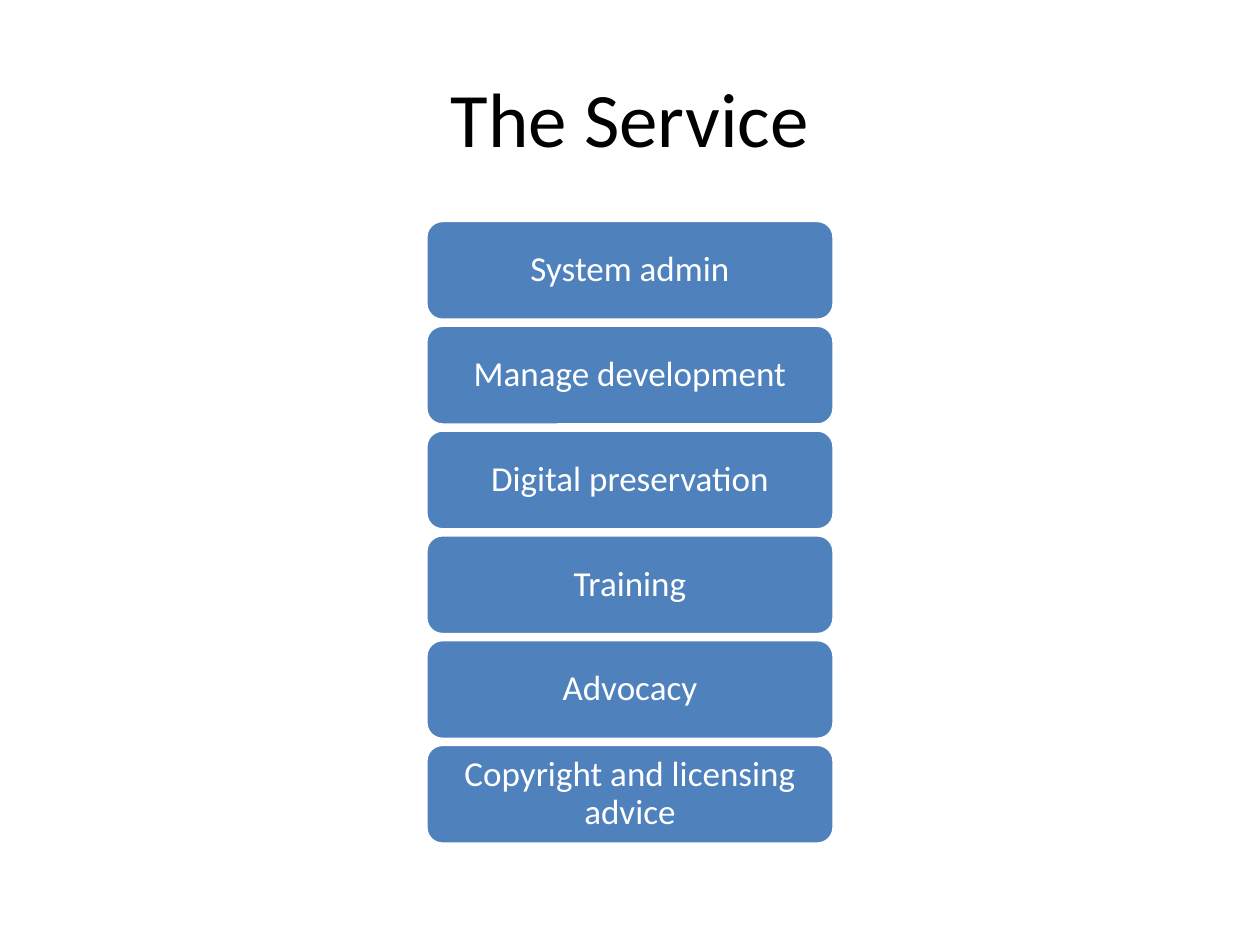
from pptx import Presentation
from pptx.dml.color import RGBColor
from pptx.enum.shapes import MSO_SHAPE
from pptx.enum.text import MSO_ANCHOR, PP_ALIGN
from pptx.util import Inches, Pt

SERVICES = ["System admin", "Manage development", "Digital preservation",
            "Training", "Advocacy", "Copyright and licensing advice"]


def rgb(value):
    """Turn a hex string into a colour."""
    return RGBColor.from_string(value)


def set_text(sp, text, size, color, inset_x, inset_y, spacing=1.0):
    """Write one centred paragraph into a shape."""
    tf = sp.text_frame
    frame = {"word_wrap": True, "vertical_anchor": MSO_ANCHOR.MIDDLE,
             "margin_left": Inches(inset_x), "margin_right": Inches(inset_x),
             "margin_top": Inches(inset_y), "margin_bottom": Inches(inset_y)}
    for name, value in frame.items():
        setattr(tf, name, value)
    p = tf.paragraphs[0]
    p.alignment = PP_ALIGN.CENTER
    p.line_spacing = spacing
    r = p.add_run()
    r.text = text
    for name, value in {"name": "Calibri", "size": Pt(size)}.items():
        setattr(r.font, name, value)
    r.font.color.rgb = rgb(color)


def add_title(s, text, left, top, width, height):
    """Place the slide title in the given box."""
    sp = s.shapes.add_textbox(Inches(left), Inches(top), Inches(width), Inches(height))
    set_text(sp, text, 44, "000000", 0.1, 0.05)


def add_stack(s, labels, left, top, width, height, gap_ratio=0.05):
    """Fill the given box with equal rounded bars, one per label."""
    n = len(labels)
    bar = height / (n + (n - 1) * gap_ratio)
    for i, label in enumerate(labels):
        y = top + i * bar * (1 + gap_ratio)
        sp = s.shapes.add_shape(MSO_SHAPE.ROUNDED_RECTANGLE, Inches(left), Inches(y),
                                Inches(width), Inches(bar))
        sp.shadow.inherit = False
        sp.fill.solid()
        sp.fill.fore_color.rgb = rgb("4F81BD")
        sp.line.color.rgb = rgb("FFFFFF")
        sp.line.width = Pt(2)
        set_text(sp, label, 20, "FFFFFF", 0.08, 0.04, 0.9)


def main():
    """Build and save the slide."""
    prs = Presentation()
    prs.slide_width, prs.slide_height = Inches(10), Inches(7.5)
    s = prs.slides.add_slide(prs.slide_layouts[6])
    add_title(s, "The Service", 0.5, 0.3, 9, 1.25)
    add_stack(s, SERVICES, 3.38, 1.75, 3.24, 4.95)
    prs.save("out.pptx")


if __name__ == "__main__":
    main()
